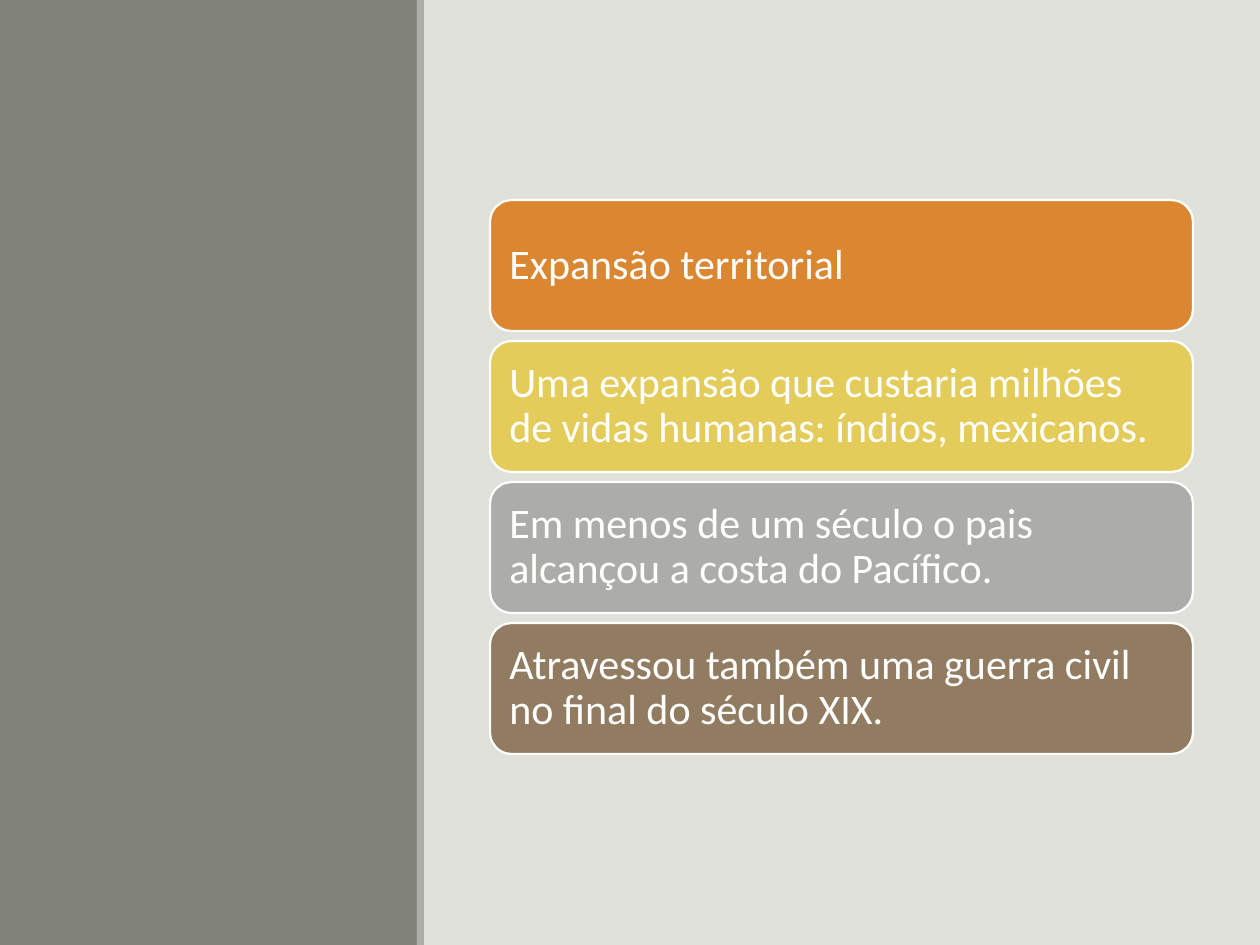
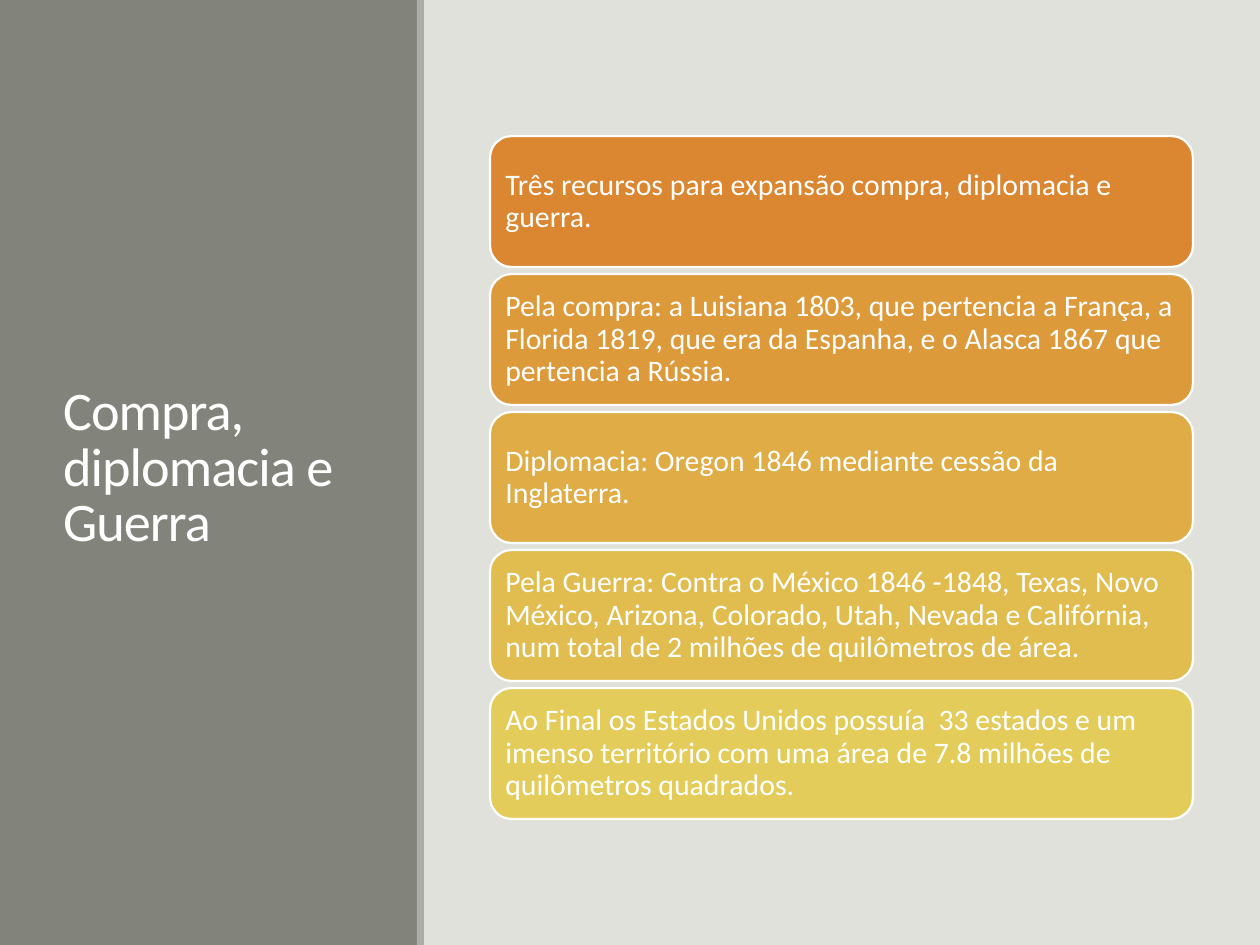
"""Build two slides on territorial expansion: a side panel and stacked cards."""
import pptx
import pptx.dml.color
import pptx.enum.shapes
import pptx.enum.text
import pptx.util

RGBColor = pptx.dml.color.RGBColor
SHAPE = pptx.enum.shapes.MSO_SHAPE

EMU_PER_PX = 914400 / 126
SLIDE_W, SLIDE_H = 1260, 945
PANEL_W, STRIP_X, STRIP_W = 418, 417, 7
CARD_X, CARD_W, CARD_H = 490, 703, 131
STACK_MIDDLE = 477

PALE = RGBColor(0xE1, 0xE1, 0xDB)
OLIVE = RGBColor(0x82, 0x84, 0x7C)
SILVER = RGBColor(0xAC, 0xAD, 0xA8)
WHITE = RGBColor(0xFF, 0xFF, 0xFF)
ORANGE = RGBColor(0xDB, 0x86, 0x31)
AMBER = RGBColor(0xDD, 0x9A, 0x3B)
GOLD = RGBColor(0xDF, 0xAC, 0x45)
MUSTARD = RGBColor(0xE1, 0xBD, 0x50)
YELLOW = RGBColor(0xE3, 0xCC, 0x5A)
BROWN = RGBColor(0x92, 0x7C, 0x61)

EXPANSION = {
    "gap": 10, "inset": 13, "size": 24,
    "cards": [
        (ORANGE, "Expansão territorial"),
        (YELLOW, "Uma expansão que custaria milhões de vidas humanas: "
                 "índios, mexicanos."),
        (SILVER, "Em menos de um século o pais alcançou a costa do Pacífico."),
        (BROWN, "Atravessou também uma guerra civil no final do século XIX."),
    ],
}
RESOURCES = {
    "gap": 7, "inset": 9, "size": 17,
    "cards": [
        (ORANGE, "Três recursos para expansão compra, diplomacia e guerra."),
        (AMBER, "Pela compra: a Luisiana 1803, que pertencia a França, a "
                "Florida 1819, que era da Espanha, e o Alasca 1867 que "
                "pertencia a Rússia."),
        (GOLD, "Diplomacia: Oregon 1846 mediante cessão da Inglaterra."),
        (MUSTARD, "Pela Guerra: Contra o México 1846 -1848, Texas, Novo "
                  "México, Arizona, Colorado, Utah, Nevada e Califórnia, num "
                  "total de 2 milhões de quilômetros de área."),
        (YELLOW, "Ao Final os Estados Unidos possuía  33 estados e um imenso "
                 "território com uma área de 7.8 milhões de quilômetros "
                 "quadrados."),
    ],
}


def px(n):
    """Turn pixels into EMU."""
    return pptx.util.Emu(round(n * EMU_PER_PX))


def set_all(obj, values):
    """Set each named attribute of an object."""
    for name, value in values.items():
        setattr(obj, name, value)


def add_block(s, shape, box, color):
    """Add a plain filled shape without outline or shadow."""
    sp = s.shapes.add_shape(shape, *map(px, box))
    sp.shadow.inherit = False
    sp.fill.solid()
    sp.fill.fore_color.rgb = color
    sp.line.fill.background()
    return sp


def write_text(sp, text, size, inset, spacing):
    """Write white, left-aligned, vertically centred text and return its run."""
    tf = sp.text_frame
    set_all(tf, {
        "word_wrap": True,
        "vertical_anchor": pptx.enum.text.MSO_ANCHOR.MIDDLE,
        "margin_left": px(inset), "margin_right": px(inset),
        "margin_top": px(inset), "margin_bottom": px(inset),
    })
    p = tf.paragraphs[0]
    set_all(p, {"alignment": pptx.enum.text.PP_ALIGN.LEFT,
                "line_spacing": spacing})
    r = p.add_run()
    r.text = text
    set_all(r.font, {"name": "Calibri", "size": pptx.util.Pt(size)})
    r.font.color.rgb = WHITE
    return r


def add_base(prs):
    """Add a blank slide with the shared background, side panel and strip."""
    s = prs.slides.add_slide(prs.slide_layouts[6])
    s.background.fill.solid()
    s.background.fill.fore_color.rgb = PALE
    add_block(s, SHAPE.RECTANGLE, (0, 0, PANEL_W, SLIDE_H), OLIVE)
    add_block(s, SHAPE.RECTANGLE, (STRIP_X, 0, STRIP_W, SLIDE_H), SILVER)
    return s


def add_title(s, text):
    """Add the title on the side panel."""
    sp = s.shapes.add_textbox(*map(px, (50, 72, 319, 795)))
    r = write_text(sp, text, size=31, inset=13, spacing=0.85)
    r.font._element.set("spc", "-50")


def add_cards(s, cards, gap, inset, size):
    """Add a stack of rounded cards centred on the stack's middle."""
    pitch = CARD_H + gap
    top = STACK_MIDDLE - (len(cards) * pitch - gap) // 2
    for i, (color, text) in enumerate(cards):
        box = (CARD_X, top + i * pitch, CARD_W, CARD_H)
        sp = add_block(s, SHAPE.ROUNDED_RECTANGLE, box, color)
        sp.line.color.rgb = WHITE
        sp.line.width = pptx.util.Pt(1.25)
        write_text(sp, text, size, inset, spacing=0.9)


def main():
    """Build and save the presentation."""
    prs = pptx.Presentation()
    set_all(prs, {"slide_width": px(SLIDE_W), "slide_height": px(SLIDE_H)})
    add_cards(add_base(prs), **EXPANSION)
    s = add_base(prs)
    add_title(s, "Compra, diplomacia e Guerra")
    add_cards(s, **RESOURCES)
    prs.save("out.pptx")


if __name__ == "__main__":
    main()
